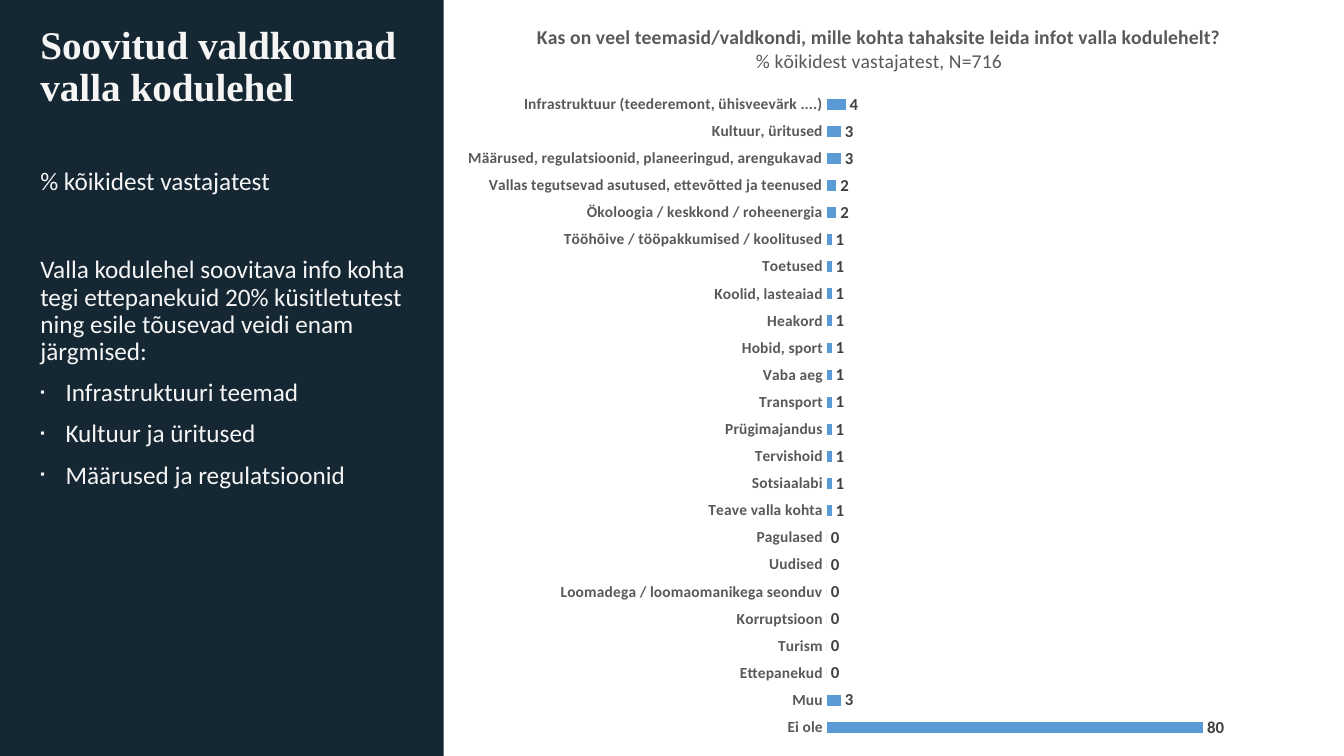
from dataclasses import dataclass

from lxml import etree
from pptx import Presentation
from pptx.chart.data import CategoryChartData
from pptx.dml.color import RGBColor
from pptx.enum.chart import XL_CHART_TYPE, XL_LABEL_POSITION, XL_TICK_MARK
from pptx.enum.shapes import MSO_SHAPE
from pptx.enum.text import MSO_ANCHOR, MSO_AUTO_SIZE, PP_ALIGN
from pptx.oxml import parse_xml
from pptx.oxml.ns import nsdecls, qn
from pptx.util import Inches, Pt

BAR = XL_CHART_TYPE.BAR_CLUSTERED
OUTSIDE_END = XL_LABEL_POSITION.OUTSIDE_END
TICK_NONE = XL_TICK_MARK.NONE
RECT = MSO_SHAPE.RECTANGLE
TOP, MIDDLE = MSO_ANCHOR.TOP, MSO_ANCHOR.MIDDLE
NO_FIT = MSO_AUTO_SIZE.NONE
LEFT = PP_ALIGN.LEFT

COLORS = {
    "panel": "061A26",
    "light": "F5F5F5",
    "bar": "5B9BD5",
    "axis": "595959",
    "label": "404040",
    "text": "000000",
}
BODY_FONT = "Calibri"
TITLE_FONT = "Times New Roman"
NUMBER_FORMAT = "###0"


@dataclass
class Passage:
    idx: int
    top: float
    height: float
    paragraphs: list[str]
    anchor: MSO_ANCHOR = TOP
    font: str = BODY_FONT
    size: int = 18
    bold: bool = False
    before: int = 10
    bullets_from: int = 99


@dataclass
class Topic:
    name: str
    percent: int


PASSAGES = [
    Passage(0, 0.2, 0.94, ["Soovitud valdkonnad valla kodulehel"],
            MIDDLE, TITLE_FONT, 28, True, 0),
    Passage(1, 2.5, 4.46, [
        "Valla kodulehel soovitava info kohta tegi ettepanekuid 20% "
        "küsitletutest ning esile tõusevad veidi enam järgmised:",
        "Infrastruktuuri teemad",
        "Kultuur ja üritused",
        "Määrused ja regulatsioonid",
    ], bullets_from=1),
    Passage(2, 1.35, 0.91, ["% kõikidest vastajatest"], MIDDLE),
]

TOPICS = [
    Topic("Infrastruktuur (teederemont, ühisveevärk ....)", 4),
    Topic("Kultuur, üritused", 3),
    Topic("Määrused, regulatsioonid, planeeringud, arengukavad", 3),
    Topic("Vallas tegutsevad asutused, ettevõtted ja teenused", 2),
    Topic("Ökoloogia / keskkond / roheenergia", 2),
    Topic("Tööhõive / tööpakkumised / koolitused", 1),
    Topic("Toetused", 1),
    Topic("Koolid, lasteaiad", 1),
    Topic("Heakord", 1),
    Topic("Hobid, sport", 1),
    Topic("Vaba aeg", 1),
    Topic("Transport", 1),
    Topic("Prügimajandus", 1),
    Topic("Tervishoid", 1),
    Topic("Sotsiaalabi", 1),
    Topic("Teave valla kohta", 1),
    Topic("Pagulased", 0),
    Topic("Uudised", 0),
    Topic("Loomadega / loomaomanikega seonduv", 0),
    Topic("Korruptsioon", 0),
    Topic("Turism", 0),
    Topic("Ettepanekud", 0),
    Topic("Muu", 3),
    Topic("Ei ole", 80),
]
CHART_TITLE = [
    "Kas on veel teemasid/valdkondi, mille kohta tahaksite leida infot valla kodulehelt?",
    "% kõikidest vastajatest, N=716",
]
PLOT_AREA = {"x": 0.44, "y": 0.12, "w": 0.54, "h": 0.86}


def rgb(name: str) -> RGBColor:
    return RGBColor.from_string(COLORS[name])


def style_font(font, size: int, color: str, bold: bool, name: str = BODY_FONT) -> None:
    font.size = Pt(size)
    font.bold = bold
    font.name = name
    font.color.rgb = rgb(color)


def add_panel(s) -> None:
    sp = s.shapes.add_shape(RECT, 0, 0, Inches(4.42), Inches(7.5))
    sp.shadow.inherit = False
    sp.fill.solid()
    sp.fill.fore_color.rgb = rgb("panel")
    sp.line.fill.background()
    color = sp.element.spPr.find(qn("a:solidFill"))[0]
    etree.SubElement(color, qn("a:alpha"), val="94000")
    s.shapes.element.insert(2, sp.element)


def set_bullet(p, bulleted: bool) -> None:
    pPr = p._p.get_or_add_pPr()
    indent = Inches(0.25) if bulleted else 0
    pPr.set("marL", str(indent))
    pPr.set("indent", str(-indent))
    if bulleted:
        etree.SubElement(pPr, qn("a:buSzPct"), val="50000")
        etree.SubElement(pPr, qn("a:buChar"), char="▪")
    else:
        etree.SubElement(pPr, qn("a:buNone"))


def fill_placeholder(s, passage: Passage) -> None:
    sp = s.placeholders[passage.idx]
    sp.left, sp.top = Inches(0.3), Inches(passage.top)
    sp.width, sp.height = Inches(3.82), Inches(passage.height)
    tf = sp.text_frame
    tf.text = "\n".join(passage.paragraphs)
    tf.word_wrap = True
    tf.auto_size = NO_FIT
    tf.vertical_anchor = passage.anchor
    for i, p in enumerate(tf.paragraphs):
        p.alignment = LEFT
        p.line_spacing = 0.9
        p.space_before = Pt(passage.before)
        set_bullet(p, i >= passage.bullets_from)
        for r in p.runs:
            style_font(r.font, passage.size, "light", passage.bold, passage.font)


def place_plot(chart) -> None:
    plot_area = chart.element.chart.plotArea
    for old in plot_area.findall(qn("c:layout")):
        plot_area.remove(old)
    sizes = "".join(f'<c:{k} val="{v}"/>' for k, v in PLOT_AREA.items())
    plot_area.insert(0, parse_xml(
        f'<c:layout {nsdecls("c")}><c:manualLayout><c:layoutTarget val="inner"/>'
        f'<c:xMode val="edge"/><c:yMode val="edge"/>{sizes}'
        '</c:manualLayout></c:layout>'))
    chart.element.chart.addnext(parse_xml(
        f'<c:spPr {nsdecls("c", "a")}><a:solidFill><a:srgbClr val="FFFFFF"/>'
        '</a:solidFill><a:ln><a:noFill/></a:ln></c:spPr>'))


def add_topic_chart(s) -> None:
    data = CategoryChartData(number_format=NUMBER_FORMAT)
    data.categories = [t.name for t in TOPICS]
    data.add_series("Series 1", [t.percent for t in TOPICS])
    chart = s.shapes.add_chart(
        BAR, Inches(4.4), 0, Inches(8.64), Inches(7.5), data).chart
    style_font(chart.font, 10, "text", False)
    chart.has_legend = False
    tf = chart.chart_title.text_frame
    tf.text = "\n".join(CHART_TITLE)
    for i, p in enumerate(tf.paragraphs):
        style_font(p.runs[0].font, 14, "axis", i == 0)

    axis = chart.category_axis
    axis.reverse_order = True
    axis.major_tick_mark = TICK_NONE
    axis.format.line.fill.background()
    style_font(axis.tick_labels.font, 11, "axis", True)
    values = chart.value_axis
    values.visible = False
    values.has_major_gridlines = False
    values.minimum_scale, values.maximum_scale = 0, 100

    plot = chart.plots[0]
    plot.gap_width = 150
    plot.vary_by_categories = False
    fill = plot.series[0].format.fill
    fill.solid()
    fill.fore_color.rgb = rgb("bar")
    labels = plot.series[0].data_labels
    labels.show_value = True
    labels.number_format = NUMBER_FORMAT
    labels.number_format_is_linked = False
    labels.position = OUTSIDE_END
    style_font(labels.font, 12, "label", True)
    place_plot(chart)


def main() -> None:
    prs = Presentation()
    prs.slide_width, prs.slide_height = Inches(13.33), Inches(7.5)
    s = prs.slides.add_slide(prs.slide_layouts[3])
    add_panel(s)
    for passage in PASSAGES:
        fill_placeholder(s, passage)
    add_topic_chart(s)
    prs.save("out.pptx")


if __name__ == "__main__":
    main()
